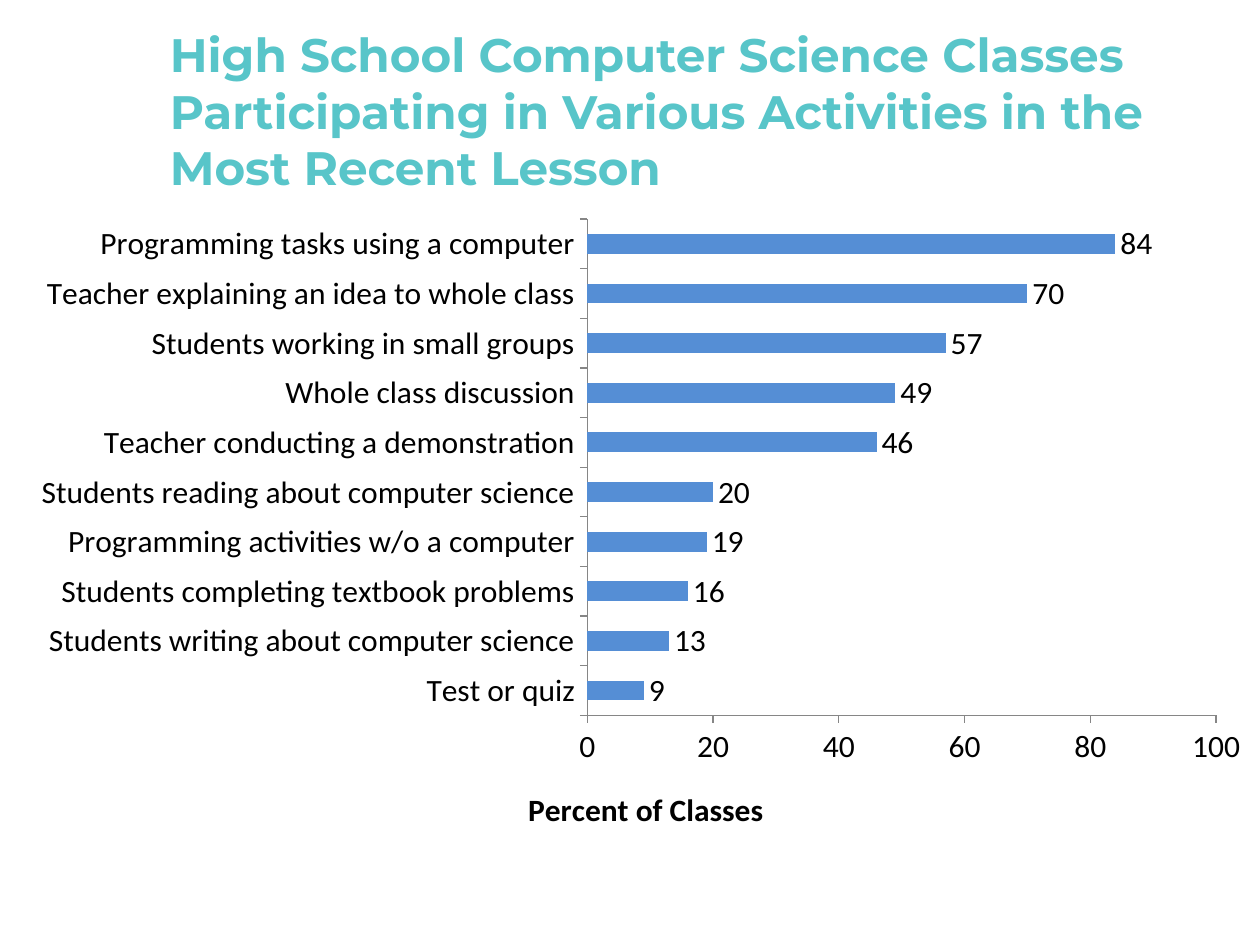
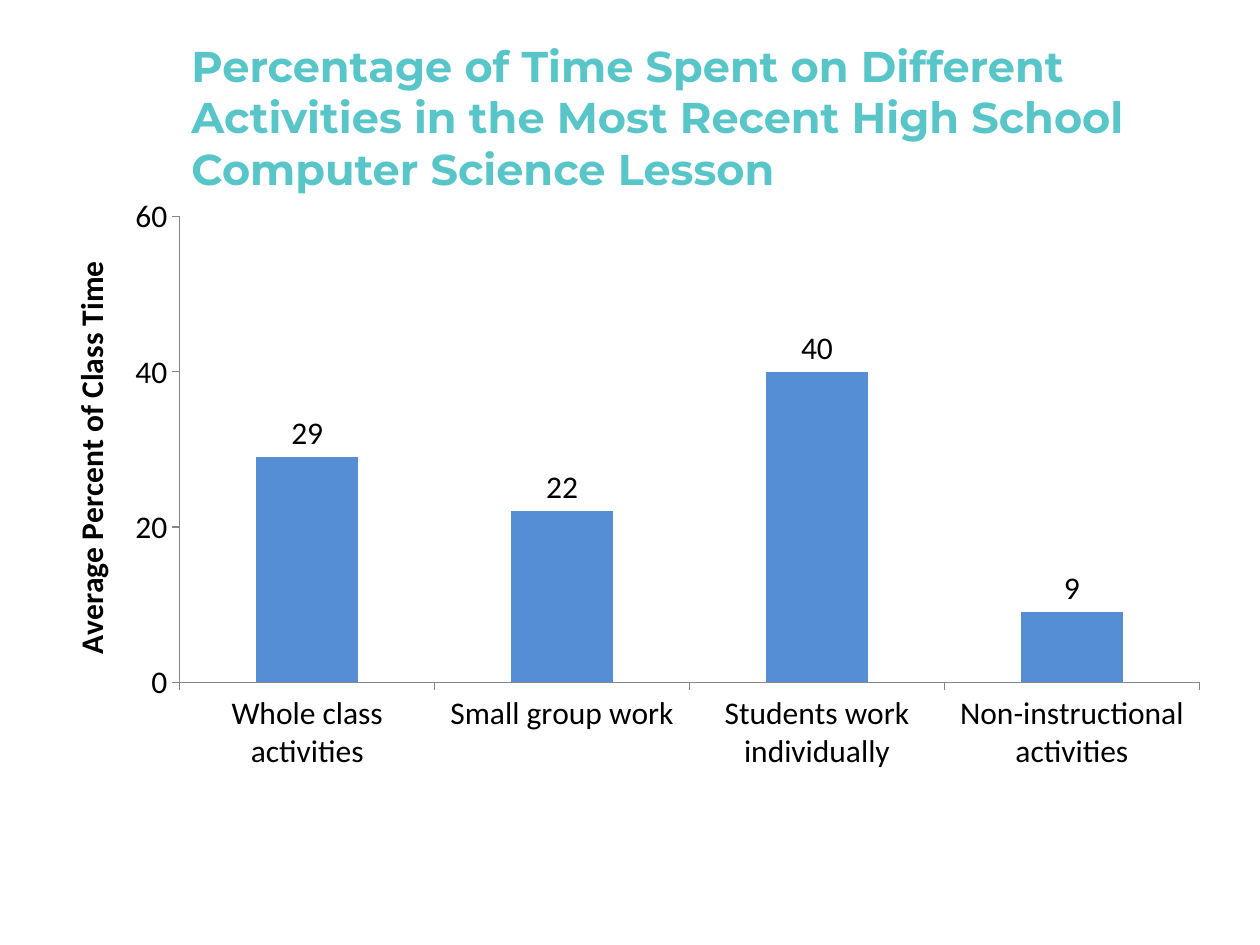
from dataclasses import dataclass

import pptx
import pptx.chart.data
import pptx.dml.color
import pptx.enum.chart
import pptx.enum.text
import pptx.oxml
import pptx.oxml.ns
import pptx.util
from pptx.util import Inches


@dataclass(frozen=True)
class Theme:
    heading_font: str = "Montserrat"
    chart_font: str = "Calibri"
    teal: str = "58C5C9"
    bar_blue: str = "558ED5"
    black: str = "000000"
    axis_grey: str = "868686"
    chart_size: float = 18
    axis_width: float = 0.75


@dataclass(frozen=True)
class Box:
    left: float
    top: float
    width: float
    height: float

    def lengths(self) -> list[pptx.util.Length]:
        return [Inches(side) for side in (self.left, self.top, self.width, self.height)]


@dataclass(frozen=True)
class ActivityChart:
    kind: pptx.enum.chart.XL_CHART_TYPE
    box: Box
    plot: Box  # fractions of the chart
    percents: dict[str, int]
    maximum: int
    axis_caption: str
    caption_at: tuple[float, float]  # fractions of the chart
    caption_turn: int  # degrees


@dataclass(frozen=True)
class LessonSlide:
    heading: str
    heading_size: float
    heading_box: Box
    chart: ActivityChart


THEME = Theme()

LESSON_SLIDES = [
    LessonSlide(
        "High School Computer Science Classes Participating in Various "
        "Activities in the Most Recent Lesson",
        26.8,
        Box(1.25, 0.25, 8.25, 1.25),
        ActivityChart(
            kind=pptx.enum.chart.XL_CHART_TYPE.BAR_CLUSTERED,
            box=Box(0, 1.33, 9.92, 5.33),
            plot=Box(0.47, 0.078, 0.503, 0.75),
            percents={
                "Test or quiz": 9,
                "Students writing about computer science": 13,
                "Students completing textbook problems": 16,
                "Programming activities w/o a computer": 19,
                "Students reading about computer science": 20,
                "Teacher conducting a demonstration": 46,
                "Whole class discussion": 49,
                "Students working in small groups": 57,
                "Teacher explaining an idea to whole class": 70,
                "Programming tasks using a computer": 84,
            },
            maximum=100,
            axis_caption="Percent of Classes",
            caption_at=(0.418, 0.93),
            caption_turn=0,
        ),
    ),
    LessonSlide(
        "Percentage of Time Spent on Different Activities in the Most "
        "Recent High School Computer Science Lesson",
        24.6,
        Box(1.42, 0.3, 8.08, 1.25),
        ActivityChart(
            kind=pptx.enum.chart.XL_CHART_TYPE.COLUMN_CLUSTERED,
            box=Box(0.25, 1.5, 9.42, 5),
            plot=Box(0.125, 0.044, 0.859, 0.739),
            percents={
                "Whole class activities": 29,
                "Small group work": 22,
                "Students work individually": 40,
                "Non-instructional activities": 9,
            },
            maximum=60,
            axis_caption="Average Percent of Class Time",
            caption_at=(0.027, 0.106),
            caption_turn=-90,
        ),
    ),
]


def rgb(value: str) -> pptx.dml.color.RGBColor:
    return pptx.dml.color.RGBColor.from_string(value)


def style_font(font, *, name: str, size: float, color: str, bold: bool = False) -> None:
    font.name, font.size, font.bold = name, pptx.util.Pt(size), bold
    font.color.rgb = rgb(color)


def write_text(frame, text: str, **font_format) -> None:
    paragraph = frame.paragraphs[0]
    run = paragraph.add_run()
    run.text = text
    style_font(run.font, **font_format)


def place_part(parent, index: int, x: float, y: float, size: str = "", target: str = "") -> None:
    """Give a chart part a fixed place, in fractions of the chart."""
    for previous in parent.findall(pptx.oxml.ns.qn("c:layout")):
        parent.remove(previous)
    parent.insert(index, pptx.oxml.parse_xml(
        f'<c:layout {pptx.oxml.ns.nsdecls("c")}><c:manualLayout>{target}'
        '<c:xMode val="edge"/><c:yMode val="edge"/>'
        f'<c:x val="{x}"/><c:y val="{y}"/>{size}</c:manualLayout></c:layout>'))


def add_heading(slide, content: LessonSlide) -> None:
    frame = slide.shapes.add_textbox(*content.heading_box.lengths()).text_frame
    frame.word_wrap = True
    frame.vertical_anchor = pptx.enum.text.MSO_ANCHOR.MIDDLE
    write_text(frame, content.heading, name=THEME.heading_font,
               size=content.heading_size, color=THEME.teal, bold=True)


def add_axis_caption(axis, content: ActivityChart) -> None:
    caption = axis.axis_title
    write_text(caption.text_frame, content.axis_caption, name=THEME.chart_font,
               size=THEME.chart_size, color=THEME.black, bold=True)
    title = axis._element.find(pptx.oxml.ns.qn("c:title"))
    body = title.find(".//" + pptx.oxml.ns.qn("a:bodyPr"))
    body.set("rot", str(content.caption_turn * 60000))
    body.set("vert", "horz")
    place_part(title, 1, *content.caption_at)


def add_activity_chart(slide, content: ActivityChart) -> None:
    data = pptx.chart.data.CategoryChartData()
    data.categories = list(content.percents)
    data.add_series("Series 1", list(content.percents.values()))
    chart = slide.shapes.add_chart(content.kind, *content.box.lengths(), data).chart
    chart.has_legend = chart.has_title = False
    style_font(chart.font, name=THEME.chart_font, size=THEME.chart_size, color=THEME.black)

    # Bars and their values
    plot = chart.plots[0]
    plot.gap_width = 150
    plot.vary_by_categories = False
    bars = plot.series[0]
    bars.format.fill.solid()
    bars.format.fill.fore_color.rgb = rgb(THEME.bar_blue)
    labels = bars.data_labels
    labels.show_value = True
    labels.position = pptx.enum.chart.XL_LABEL_POSITION.OUTSIDE_END

    # Axes
    for axis in (chart.category_axis, chart.value_axis):
        axis.has_major_gridlines = False
        axis.major_tick_mark = pptx.enum.chart.XL_TICK_MARK.OUTSIDE
        axis.minor_tick_mark = pptx.enum.chart.XL_TICK_MARK.NONE
        axis.format.line.color.rgb = rgb(THEME.axis_grey)
        axis.format.line.width = pptx.util.Pt(THEME.axis_width)
    percent_axis = chart.value_axis
    percent_axis.minimum_scale, percent_axis.maximum_scale = 0, content.maximum
    percent_axis.major_unit = 20
    add_axis_caption(percent_axis, content)

    # Plot area
    area = content.plot
    plot_area = chart._chartSpace.find(".//" + pptx.oxml.ns.qn("c:plotArea"))
    place_part(plot_area, 0, area.left, area.top,
               size=f'<c:w val="{area.width}"/><c:h val="{area.height}"/>',
               target='<c:layoutTarget val="inner"/>')


def main() -> None:
    deck = pptx.Presentation()
    deck.slide_width, deck.slide_height = Inches(10), Inches(7.5)
    for content in LESSON_SLIDES:
        slide = deck.slides.add_slide(deck.slide_layouts[6])
        add_activity_chart(slide, content.chart)
        add_heading(slide, content)
    deck.save("out.pptx")


if __name__ == "__main__":
    main()
